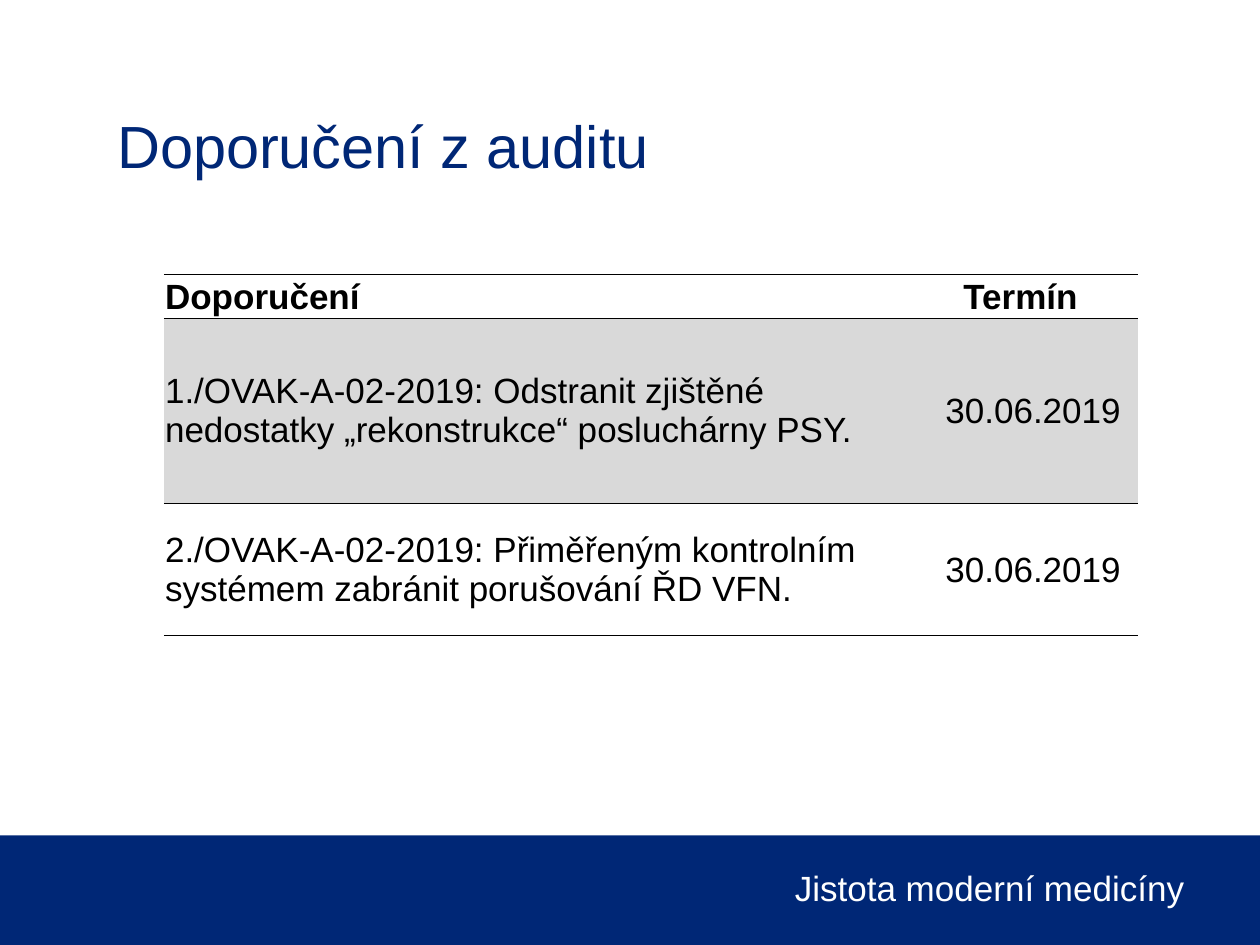
import pptx
import pptx.dml.color
import pptx.enum.shapes
import pptx.enum.text
import pptx.oxml
import pptx.oxml.ns
import pptx.util

Inches = pptx.util.Inches
RGBColor = pptx.dml.color.RGBColor
PP_ALIGN = pptx.enum.text.PP_ALIGN
MIDDLE = pptx.enum.text.MSO_ANCHOR.MIDDLE

NAVY = RGBColor(0x00, 0x27, 0x76)
WHITE = RGBColor(0xFF, 0xFF, 0xFF)
BLACK = RGBColor(0x00, 0x00, 0x00)
GREY = RGBColor(0xD9, 0xD9, 0xD9)
NO_STYLE = "{2D5ABB26-0587-4C30-8999-92F81FD0307C}"


def write(tf, text, size=20, color=BLACK, bold=False, align=PP_ALIGN.LEFT, indent=0):
    p = tf.paragraphs[0]
    p.alignment = align
    if indent:
        p_pr = p._p.get_or_add_pPr()
        p_pr.set("marL", str(Inches(indent)))
        p_pr.set("indent", "0")
    r = p.add_run()
    r.text = text
    r.font.name = "Arial"
    r.font.size = pptx.util.Pt(size)
    r.font.bold = bold
    r.font.color.rgb = color


def add_border(cell, side, points):
    """Draw a black line on one side ("T" or "B") of a cell, before its fill is set."""
    cell._tc.get_or_add_tcPr().append(pptx.oxml.parse_xml(
        f'<a:ln{side} {pptx.oxml.ns.nsdecls("a")} w="{pptx.util.Pt(points)}">'
        f'<a:solidFill><a:srgbClr val="{BLACK}"/></a:solidFill></a:ln{side}>'))


prs = pptx.Presentation()
prs.slide_width, prs.slide_height = Inches(10), Inches(7.5)
s = prs.slides.add_slide(prs.slide_layouts[5])

# Footer band with the motto
band = s.shapes.add_shape(pptx.enum.shapes.MSO_SHAPE.RECTANGLE,
                          Inches(0), Inches(6.63), Inches(10), Inches(0.87))
band.shadow.inherit = False
band.fill.solid()
band.fill.fore_color.rgb = NAVY
band.line.fill.background()

motto = s.shapes.add_textbox(Inches(5.96), Inches(6.83), Inches(3.54), Inches(0.47))
motto.text_frame.word_wrap = True
write(motto.text_frame, "Jistota moderní medicíny", color=WHITE, align=PP_ALIGN.RIGHT)

# Title
title = s.shapes.title
title.left, title.top = Inches(0.83), Inches(0.52)
title.width, title.height = Inches(8.82), Inches(1.25)
title.text_frame.vertical_anchor = MIDDLE
write(title.text_frame, "Doporučení z auditu", size=34, color=NAVY)

# Table of recommendations: text, deadline, row height, fill, borders
rows = [
    ("Doporučení", "Termín", 0.34, WHITE, {"T": 0.5, "B": 0.5}),
    ("1./OVAK-A-02-2019: Odstranit zjištěné nedostatky „rekonstrukce“ posluchárny PSY.",
     "30.06.2019", 1.47, GREY, {"T": 0.5}),
    ("2./OVAK-A-02-2019: Přiměřeným kontrolním systémem zabránit porušování ŘD VFN.",
     "30.06.2019", 1.05, None, {"B": 1}),
]
table = s.shapes.add_table(len(rows), 2, Inches(1.3), Inches(2.18),
                           Inches(7.73), Inches(2.86)).table
table.horz_banding = False
table._tbl.tblPr.find(pptx.oxml.ns.qn("a:tableStyleId")).text = NO_STYLE
for column, width in zip(table.columns, (5.87, 1.86)):
    column.width = Inches(width)

for i, (recommendation, deadline, height, fill, borders) in enumerate(rows):
    table.rows[i].height = Inches(height)
    header = i == 0
    for j, text in enumerate((recommendation, deadline)):
        cell = table.cell(i, j)
        cell.margin_left = cell.margin_top = cell.margin_right = Inches(0.01)
        cell.margin_bottom = Inches(0)
        cell.vertical_anchor = MIDDLE
        for side, points in borders.items():
            add_border(cell, side, points)
        if fill is None:
            cell.fill.background()
        else:
            cell.fill.solid()
            cell.fill.fore_color.rgb = fill
        write(cell.text_frame, text, bold=header,
              align=PP_ALIGN.CENTER if j else PP_ALIGN.LEFT,
              indent=0.2 if j and not header else 0)

prs.save("out.pptx")
